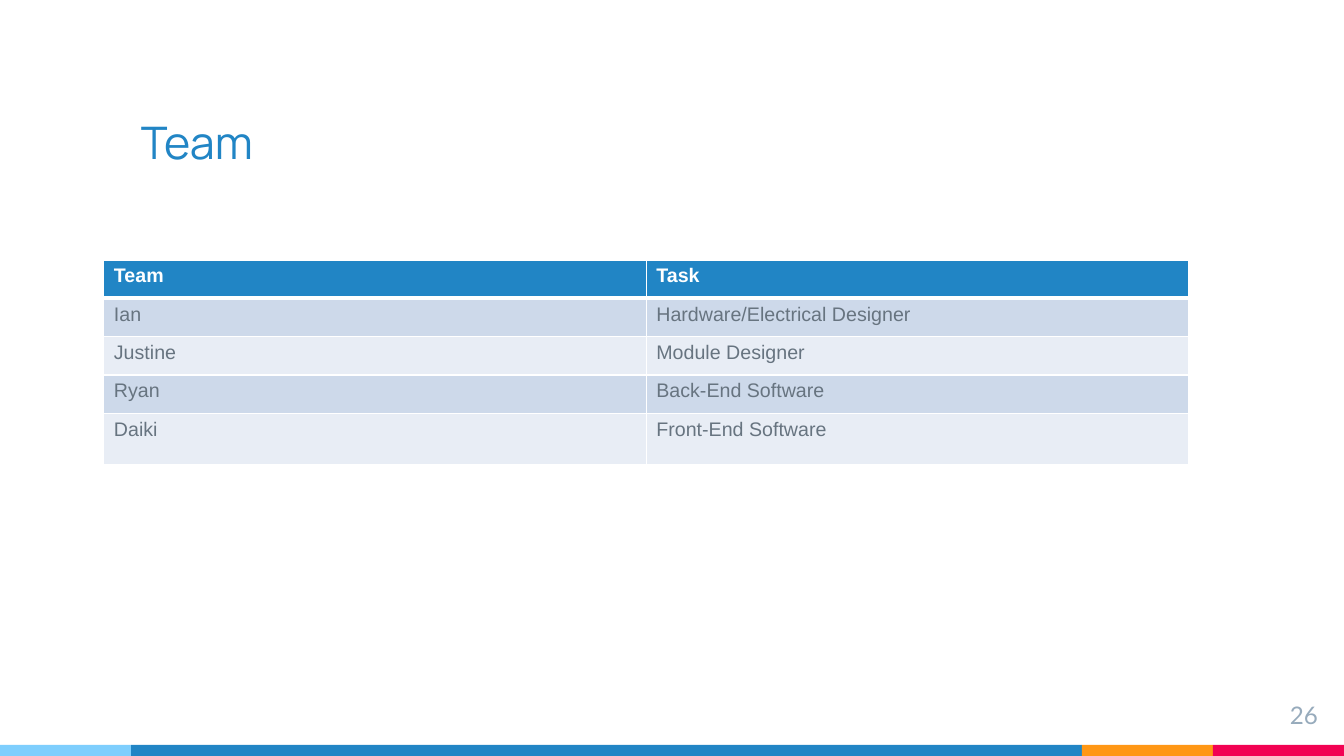
from lxml.etree import SubElement
from pptx import Presentation
from pptx.dml.color import RGBColor
from pptx.enum.shapes import MSO_SHAPE
from pptx.enum.text import MSO_ANCHOR, PP_ALIGN
from pptx.oxml.ns import qn
from pptx.util import Inches, Pt

COLORS = {
    "sky": "7ECEFD", "blue": "2185C5", "orange": "FF9715", "red": "F20253",
    "white": "FFFFFF", "gray": "677480", "number": "97ABBC",
    "band_dark": "CDD9EA", "band_light": "E8EDF5",
}
FORMATS = {
    "title": {"name": "Manrope", "size": Pt(32), "color": "blue"},
    "number": {"name": "Lato", "size": Pt(17.3), "color": "number"},
    "header": {"name": "Arial", "size": Pt(14), "color": "white", "bold": True},
    "body": {"name": "Arial", "size": Pt(14), "color": "gray", "bold": False},
}
TEAM_ROWS = [
    ("Team", "Task"),
    ("Ian", "Hardware/Electrical Designer"),
    ("Justine", "Module Designer"),
    ("Ryan", "Back-End Software"),
    ("Daiki", "Front-End Software"),
]
ROW_HEIGHTS = [0.38, 0.38, 0.38, 0.38, 0.51]
FOOTER_PARTS = [("sky", 1.3), ("blue", 9.43), ("orange", 1.3), ("red", 1.3)]


def rgb(color):
    return RGBColor.from_string(COLORS[color])


class SlideBuilder:
    def __init__(self, page):
        self.page = page

    def fill_text(self, frame, text, style, align=PP_ALIGN.LEFT):
        para = frame.paragraphs[0]
        para.alignment = align
        span = para.add_run()
        span.text = text
        for key, value in FORMATS[style].items():
            if key == "color":
                span.font.color.rgb = rgb(value)
            else:
                setattr(span.font, key, value)

    def bar(self, left, top, width, height, color):
        shape = self.page.shapes.add_shape(
            MSO_SHAPE.RECTANGLE, *map(Inches, (left, top, width, height)))
        shape.shadow.inherit = False
        shape.fill.solid()
        shape.fill.fore_color.rgb = rgb(color)
        shape.line.fill.background()

    def text(self, left, top, width, height, text, style,
             anchor=MSO_ANCHOR.TOP, align=PP_ALIGN.LEFT):
        box = self.page.shapes.add_textbox(
            *map(Inches, (left, top, width, height)))
        frame = box.text_frame
        frame.word_wrap = True
        frame.vertical_anchor = anchor
        for side in ("left", "top", "right", "bottom"):
            setattr(frame, f"margin_{side}", Inches(0.1))
        self.fill_text(frame, text, style, align)

    def borders(self, cell, bottom):
        properties = cell._tc.get_or_add_tcPr()
        widths = {"lnL": 1, "lnR": 1, "lnT": 1, "lnB": bottom}
        for index, (side, width) in enumerate(widths.items()):
            line = SubElement(properties, qn(f"a:{side}"), w=str(Pt(width)))
            fill = SubElement(line, qn("a:solidFill"))
            SubElement(fill, qn("a:srgbClr"), val=COLORS["white"])
            properties.insert(index, line)  # borders come before the fill

    def table(self, left, top, width, rows, heights):
        columns = len(rows[0])
        table = self.page.shapes.add_table(
            len(rows), columns,
            *map(Inches, (left, top, width, sum(heights)))).table
        for column in table.columns:
            column.width = Inches(width / columns)
        for r, (values, height) in enumerate(zip(rows, heights)):
            table.rows[r].height = Inches(height)
            band = "band_dark" if r % 2 else "band_light"
            for c, value in enumerate(values):
                cell = table.cell(r, c)
                cell.fill.solid()
                cell.fill.fore_color.rgb = rgb(band if r else "blue")
                self.borders(cell, bottom=1 if r else 3)
                self.fill_text(cell.text_frame, value,
                               "body" if r else "header")


def main():
    deck = Presentation()
    deck.slide_width, deck.slide_height = Inches(13.33), Inches(7.5)
    builder = SlideBuilder(deck.slides.add_slide(deck.slide_layouts[6]))

    # Footer stripe
    left = 0
    for color, width in FOOTER_PARTS:
        builder.bar(left, 7.39, width, 0.11, color)
        left += width

    # Title and page number
    builder.text(1.3, 0.52, 9.42, 1.25, "Team", "title", MSO_ANCHOR.BOTTOM)
    builder.text(12.37, 6.85, 0.8, 0.46, "26", "number", align=PP_ALIGN.RIGHT)

    # Team table
    builder.table(1.03, 2.58, 10.76, TEAM_ROWS, ROW_HEIGHTS)

    deck.save("out.pptx")


if __name__ == "__main__":
    main()
